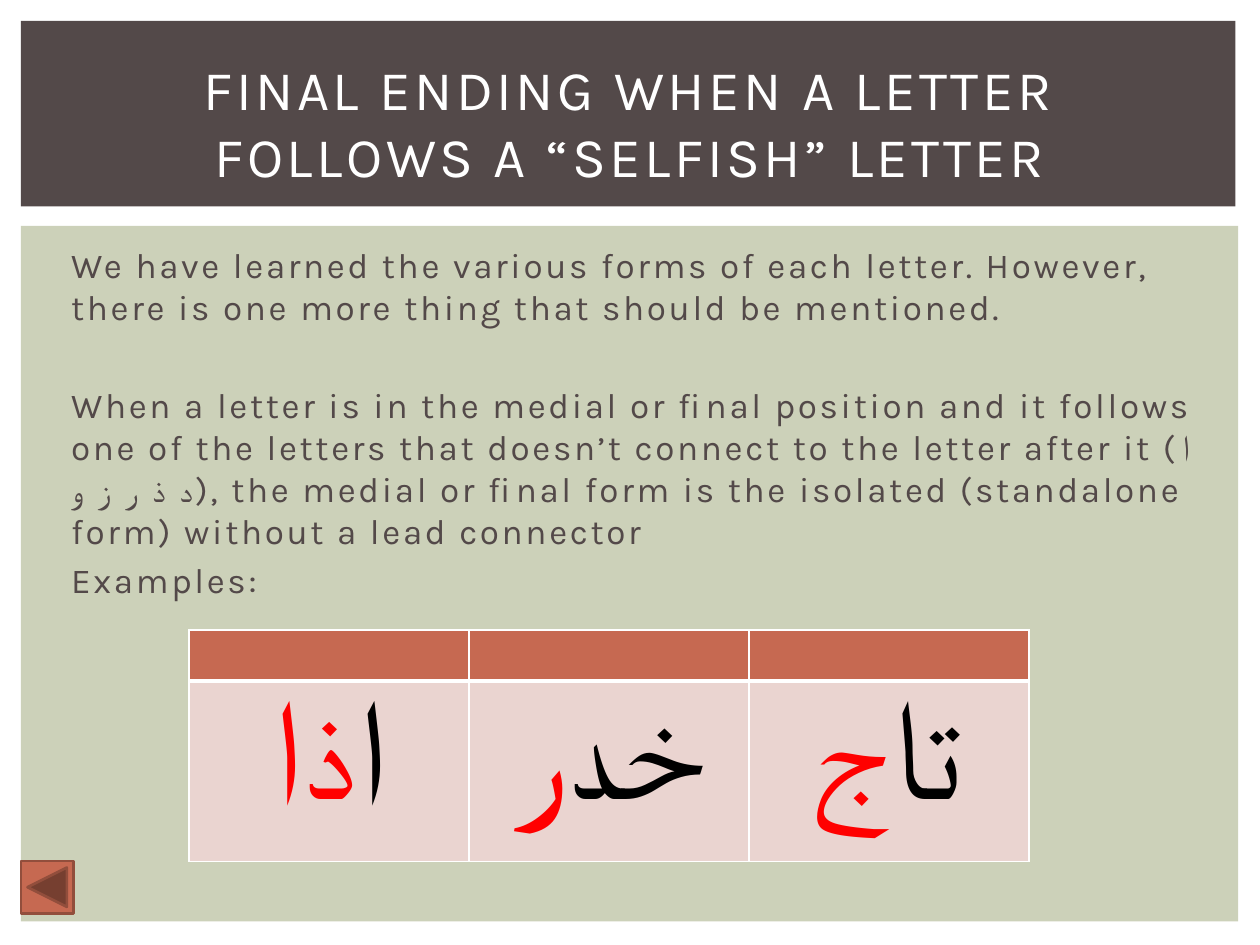
from pptx import Presentation
from pptx.dml.color import RGBColor
from pptx.enum.shapes import MSO_SHAPE
from pptx.enum.text import MSO_ANCHOR, MSO_AUTO_SIZE, PP_ALIGN
from pptx.oxml.ns import qn
from pptx.util import Pt
from lxml.etree import SubElement

FONT = "Karla"
COLORS = {
    "white": "FFFFFF", "brown": "534949", "sage": "CCD1B9",
    "rust": "C66951", "rust_dark": "924E3C", "pink": "EAD4D0",
    "black": "000000", "red": "FF0000",
}
TITLE = "FINAL ENDING WHEN A LETTER FOLLOWS A “SELFISH” LETTER"
# Each paragraph with the space before it, in points
BODY = [
    ("We have learned the various forms of each letter. However, there is "
     "one more thing that should be mentioned.", 4),
    ("When a letter is in the medial or final position and it follows one of "
     "the letters that doesn’t connect to the letter after it (ا د ذ ر ز و), "
     "the medial or final form is the isolated (standalone form) without a "
     "lead connector", 32),
    ("Examples:", 4),
]
# Start of each word, then the letters that take the isolated form
EXAMPLES = [("ا", "ذا"), ("خد", "ر"), ("تا", "ج")]


def rgb(name):
    return RGBColor.from_string(COLORS[name])


def add_run(p, text, size, color, spacing=0):
    """Add a run; spacing is the letter spacing in points."""
    r = p.add_run()
    r.text = text
    r.font.name = FONT
    r.font.size = Pt(size)
    r.font.color.rgb = rgb(color)
    if spacing:
        r.font._element.set("spc", str(int(spacing * 100)))


def add_block(s, kind, box, fill, line=None):
    sp = s.shapes.add_shape(kind, *map(Pt, box))
    sp.shadow.inherit = False
    sp.fill.solid()
    sp.fill.fore_color.rgb = rgb(fill)
    if line:
        sp.line.color.rgb = rgb(line)
        sp.line.width = Pt(1.5)
    else:
        sp.line.fill.background()


def add_title(s, box):
    """Place the title in its band, in front of the fill."""
    x, y, w, h = box
    add_block(s, MSO_SHAPE.RECTANGLE, box, "brown")
    title = s.shapes.title
    title.element.getparent().append(title.element)
    title.left, title.top = Pt(x + 18), Pt(y + 16)
    title.width, title.height = Pt(w - 34), Pt(h - 23)
    tf = title.text_frame
    tf.word_wrap = True
    tf.auto_size = MSO_AUTO_SIZE.NONE
    tf.vertical_anchor = MSO_ANCHOR.MIDDLE
    p = tf.paragraphs[0]
    p.alignment = PP_ALIGN.CENTER
    add_run(p, TITLE, 32, "white", 2)


def add_body(s, box):
    x, y, w, h = box
    tf = s.shapes.add_textbox(Pt(x), Pt(y), Pt(w), Pt(h)).text_frame
    tf.word_wrap = True
    for i, (text, before) in enumerate(BODY):
        p = tf.add_paragraph() if i else tf.paragraphs[0]
        p.space_before = Pt(before)
        p._p.get_or_add_pPr().set("marL", str(Pt(3.6)))
        add_run(p, text, 20, "brown", 1.5)


def set_borders(cell, top, bottom):
    """Draw white cell borders; top and bottom are widths in points."""
    tc_pr = cell._tc.get_or_add_tcPr()
    widths = {"a:lnL": 1, "a:lnR": 1, "a:lnT": top, "a:lnB": bottom}
    for i, (tag, width) in enumerate(widths.items()):
        ln = SubElement(tc_pr, qn(tag), w=str(Pt(width)))
        fill = SubElement(ln, qn("a:solidFill"))
        SubElement(fill, qn("a:srgbClr"), val=COLORS["white"])
        tc_pr.insert(i, ln)


def add_examples(s, box):
    x, y, w, h = box
    table = s.shapes.add_table(2, len(EXAMPLES), Pt(x), Pt(y), Pt(w), Pt(h)).table
    for row in table.rows:
        row.height = Pt(h / 2)
    for col, (start, ending) in enumerate(EXAMPLES):
        table.columns[col].width = Pt(w / len(EXAMPLES))
        head, word = table.cell(0, col), table.cell(1, col)
        for cell, fill, top, bottom in ((head, "rust", 1, 3), (word, "pink", 3, 1)):
            cell.fill.solid()
            cell.fill.fore_color.rgb = rgb(fill)
            set_borders(cell, top, bottom)
        p = word.text_frame.paragraphs[0]
        p.alignment = PP_ALIGN.CENTER
        add_run(p, start, 80, "black")
        add_run(p, ending, 80, "red")


def add_content(s, box):
    """Fill the lower panel with text, examples and the back button."""
    x, y, w, h = box
    add_block(s, MSO_SHAPE.RECTANGLE, box, "sage")
    add_body(s, (x + 18, y + 6.5, w - 34, 347))
    add_examples(s, (x + 96, y + 231, 480, 58.4))
    add_block(s, MSO_SHAPE.ACTION_BUTTON_BACK_OR_PREVIOUS,
              (x, y + h - 34.5, 30, 30), "rust", "rust_dark")


def main():
    prs = Presentation()
    prs.slide_width, prs.slide_height = Pt(720), Pt(540)
    s = prs.slides.add_slide(prs.slide_layouts[5])
    add_title(s, (12, 12, 694, 106))
    add_content(s, (12, 129, 695.5, 397.5))
    prs.save("out.pptx")


if __name__ == "__main__":
    main()
